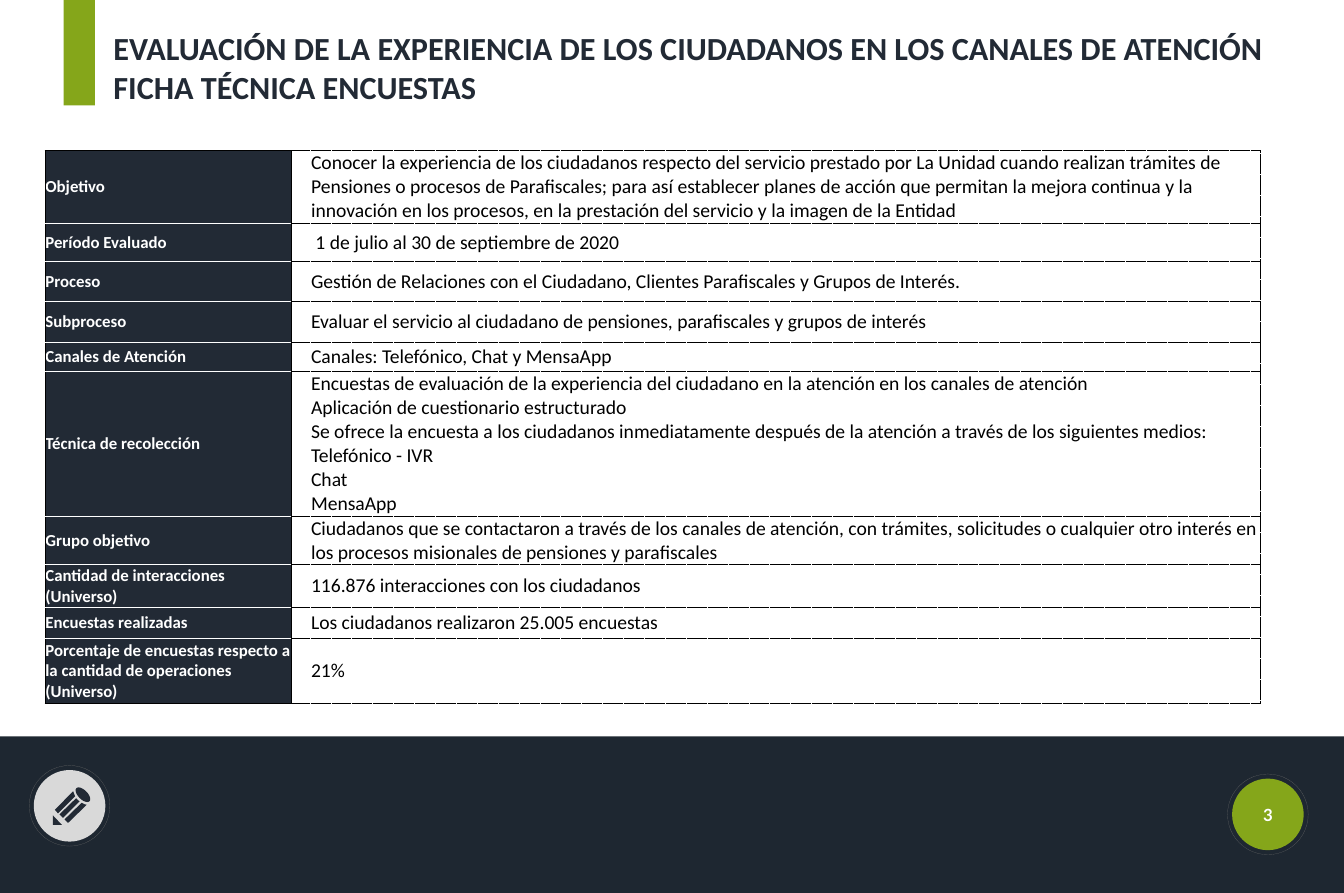
from dataclasses import dataclass
from math import cos, pi, sin

from lxml.etree import SubElement
from pptx import Presentation
from pptx.dml.color import RGBColor as RGB
from pptx.enum.dml import MSO_LINE
from pptx.enum.shapes import MSO_SHAPE as SHAPE
from pptx.enum.text import MSO_ANCHOR as ANCHOR, MSO_AUTO_SIZE as AUTO, PP_ALIGN as ALIGN
from pptx.oxml.ns import qn
from pptx.util import Emu, Pt

EMU_PER_PX = 9144  # 100 px to the inch


@dataclass(frozen=True)
class Theme:
    navy: str = "222A35"
    footer: str = "1E2731"
    green: str = "85A61A"
    grey: str = "D9D9D9"
    ring: str = "666666"
    white: str = "FFFFFF"
    black: str = "000000"
    font: str = "Calibri"
    number_font: str = "Lato"
    title_size: int = 46
    label_size: int = 24
    value_size: int = 28
    number_size: int = 24


T = Theme()

TITLE = ("EVALUACIÓN DE LA EXPERIENCIA DE LOS CIUDADANOS EN LOS CANALES DE ATENCIÓN\n"
         "FICHA TÉCNICA ENCUESTAS")

# Row height, label, value
SURVEY_ROWS = [
    (131, "Objetivo",
     "Conocer la experiencia de los ciudadanos respecto del servicio prestado por La Unidad "
     "cuando realizan trámites de Pensiones o procesos de Parafiscales; para así establecer "
     "planes de acción que permitan la mejora continua y la innovación en los procesos, en la "
     "prestación del servicio y la imagen de la Entidad"),
    (76, "Período Evaluado", " 1 de julio al 30 de septiembre de 2020"),
    (80, "Proceso",
     "Gestión de Relaciones con el Ciudadano, Clientes Parafiscales y Grupos de Interés."),
    (80, "Subproceso",
     "Evaluar el servicio al ciudadano de pensiones, parafiscales y grupos de interés"),
    (59, "Canales de Atención", "Canales: Telefónico, Chat y MensaApp"),
    (255, "Técnica de recolección",
     "Encuestas de evaluación de la experiencia del ciudadano en la atención en los canales "
     "de atención\n"
     "Aplicación de cuestionario estructurado\n"
     "Se ofrece la encuesta a los ciudadanos inmediatamente después de la atención a través "
     "de los siguientes medios:\n"
     "Telefónico - IVR\nChat\nMensaApp"),
    (96, "Grupo objetivo",
     "Ciudadanos que se contactaron a través de los canales de atención, con trámites, "
     "solicitudes o cualquier otro interés en los procesos misionales de pensiones y "
     "parafiscales"),
    (86, "Cantidad de interacciones (Universo)", "116.876 interacciones con los ciudadanos"),
    (61, "Encuestas realizadas", "Los ciudadanos realizaron 25.005 encuestas"),
    (128, "Porcentaje de encuestas respecto a la cantidad de operaciones (Universo)", "21%"),
]

PENCIL_PARTS = [
    [(105, 1618), (123, 1637), (105, 1637)],
    [(162, 1593), (128, 1626), (135, 1633), (172, 1597), (168, 1596)],
    [(155, 1588), (151, 1584), (118, 1616), (125, 1623), (158, 1590)],
    [(145, 1570), (109, 1607), (115, 1614), (149, 1580)],
]


def px(value):
    return Emu(round(value * EMU_PER_PX))


def style_text(tf, size, color, font=T.font, align=ALIGN.LEFT):
    for p in tf.paragraphs:
        p.alignment = align
        p.font.name = font
        p.font.size = Pt(size)
        p.font.bold = size != T.value_size
        p.font.color.rgb = RGB.from_string(color)


def paint(sp, color):
    sp.shadow.inherit = False
    sp.fill.solid()
    sp.fill.fore_color.rgb = RGB.from_string(color)
    sp.line.fill.background()


def add_block(shapes, kind, box, color):
    sp = shapes.add_shape(kind, *map(px, box))
    paint(sp, color)
    return sp


def add_badge(shapes, left, top, color):
    """Add a filled disc inside a thin dashed ring; return the disc."""
    group = shapes.add_group_shape().shapes
    disc = add_block(group, SHAPE.OVAL, (left, top, 142, 142), color)
    ring = group.add_shape(SHAPE.OVAL, px(left - 9), px(top - 9), px(160), px(160))
    ring.shadow.inherit = False
    ring.fill.background()
    ring.line.color.rgb = RGB.from_string(T.ring)
    ring.line.width = Pt(0.25)
    ring.line.dash_style = MSO_LINE.SQUARE_DOT
    return disc


def add_pencil(shapes):
    angles = [2 * pi * i / 24 for i in range(24)]
    eraser = [(164.5 + 13 * cos(a) + 6.5 * sin(a), 1577 + 13 * cos(a) - 6.5 * sin(a))
              for a in angles]
    outlines = [[(px(x), px(y)) for x, y in part] for part in PENCIL_PARTS + [eraser]]
    builder = shapes.build_freeform(*outlines[0][0])
    for i, points in enumerate(outlines):
        if i:
            builder.move_to(*points[0])
        builder.add_line_segments(points[1:], close=True)
    paint(builder.convert_to_shape(), T.navy)


def set_border(cell, side, color, dash="solid"):
    """Draw one side (L, R, T or B); call for the sides in that order, before the fill."""
    ln = SubElement(cell._tc.get_or_add_tcPr(), qn(f"a:ln{side}"), w=str(Pt(1)))
    SubElement(SubElement(ln, qn("a:solidFill")), qn("a:srgbClr"), val=color)
    SubElement(ln, qn("a:prstDash"), val=dash)


def fill_cell(cell, text, size, color, indent):
    cell.text = text
    cell.vertical_anchor = ANCHOR.MIDDLE
    cell.margin_left = px(indent)
    cell.margin_right = cell.margin_top = px(1)
    cell.margin_bottom = 0
    style_text(cell.text_frame, size, color)


def add_survey_table(shapes):
    heights = [row[0] for row in SURVEY_ROWS]
    last = len(SURVEY_ROWS) - 1
    table = shapes.add_table(len(SURVEY_ROWS), 2, px(89), px(299),
                             px(2410), px(sum(heights))).table
    table.first_row = table.horz_banding = False
    for col, width in zip(table.columns, (488, 1922)):
        col.width = px(width)
    for i, (height, label, value) in enumerate(SURVEY_ROWS):
        table.rows[i].height = px(height)
        head, body = table.cell(i, 0), table.cell(i, 1)
        fill_cell(head, label, T.label_size, T.white, 1)
        fill_cell(body, value, T.value_size, T.black, 40)
        top = T.white if i else T.black
        bottom = T.white if i < last else T.black
        for side, color in zip("LRTB", (T.black, T.black, top, bottom)):
            set_border(head, side, color)
        for side in "LRTB":
            set_border(body, side, T.black, "solid" if side == "L" else "dot")
        head.fill.solid()
        head.fill.fore_color.rgb = RGB.from_string(T.navy)
        body.fill.background()


def set_title(title):
    title.left, title.top, title.width, title.height = map(px, (215, 51, 2342, 165))
    tf = title.text_frame
    tf.text = TITLE
    tf.word_wrap = True
    tf.auto_size = AUTO.NONE
    tf.vertical_anchor = ANCHOR.TOP
    style_text(tf, T.title_size, T.navy)


def add_page_number(shapes):
    tf = add_badge(shapes, 2444, 1545, T.green).text_frame
    tf.text = "3"
    tf.vertical_anchor = ANCHOR.MIDDLE
    style_text(tf, T.number_size, T.white, T.number_font, ALIGN.CENTER)


def main():
    prs = Presentation()
    prs.slide_width, prs.slide_height = px(2666), px(1772)
    slide = prs.slides.add_slide(prs.slide_layouts[5])
    shapes = slide.shapes
    set_title(shapes.title)
    add_block(shapes, SHAPE.RECTANGLE, (0, 1461, 2666, 311), T.footer)
    add_badge(shapes, 67, 1528, T.grey)
    add_pencil(shapes)
    add_page_number(shapes)
    add_survey_table(shapes)
    add_block(shapes, SHAPE.RECTANGLE, (126, 0, 62, 209), T.green)
    prs.save("out.pptx")


if __name__ == "__main__":
    main()
